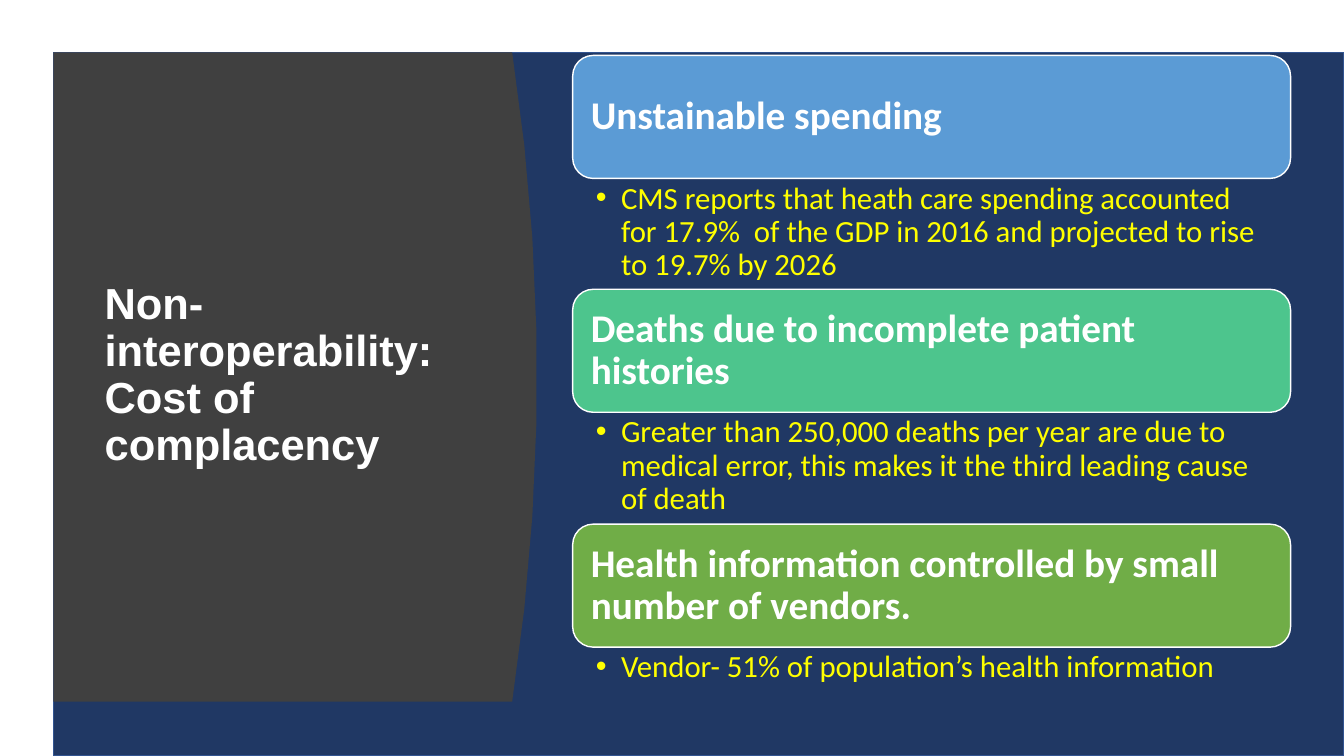
from dataclasses import dataclass

from lxml import etree
from pptx import Presentation
from pptx.dml.color import RGBColor
from pptx.enum.shapes import MSO_SHAPE
from pptx.enum.text import MSO_ANCHOR, PP_ALIGN
from pptx.oxml.ns import qn
from pptx.util import Emu, Pt

RECT = MSO_SHAPE.RECTANGLE
ROUND_RECT = MSO_SHAPE.ROUNDED_RECTANGLE
TOP, MIDDLE = MSO_ANCHOR.TOP, MSO_ANCHOR.MIDDLE
LEFT = PP_ALIGN.LEFT
SCALE = 9144


@dataclass(frozen=True)
class Theme:
    navy: str = "203864"
    navy_line: str = "325491"
    charcoal: str = "404040"
    white: str = "FFFFFF"
    yellow: str = "FFFF00"
    blue: str = "5B9BD5"
    teal: str = "4DC58D"
    green: str = "70AD47"
    title_font: str = "Arial"
    body_font: str = "Calibri"
    title_size: int = 31
    heading_size: int = 28
    body_size: int = 22


def px(n):
    return Emu(n * SCALE)


def write_text(tf, text, font, size, color, bold=False, anchor=TOP,
               insets=(10, 5, 10, 5), bullet=False):
    tf.word_wrap = True
    tf.vertical_anchor = anchor
    tf.margin_left, tf.margin_top, tf.margin_right, tf.margin_bottom = map(px, insets)
    p = tf.paragraphs[0]
    p.alignment = LEFT
    p.line_spacing = 0.9
    if bullet:
        pPr = p._p.get_or_add_pPr()
        pPr.set("marL", str(px(25)))
        pPr.set("indent", str(-px(25)))
        etree.SubElement(pPr, qn("a:buFont")).set("typeface", "Arial")
        etree.SubElement(pPr, qn("a:buChar")).set("char", "•")
    r = p.add_run()
    r.text = text
    r.font.name = font
    r.font.size = Pt(size)
    r.font.bold = bold
    r.font.color.rgb = RGBColor.from_string(color)


class Deck:
    def __init__(self, theme, width, height):
        self.theme = theme
        self.prs = Presentation()
        self.prs.slide_width, self.prs.slide_height = px(width), px(height)
        self.s = self.prs.slides.add_slide(self.prs.slide_layouts[6])

    def paint(self, sp, fill, line=None):
        sp.shadow.inherit = False
        sp.fill.solid()
        sp.fill.fore_color.rgb = RGBColor.from_string(fill)
        if line:
            sp.line.color.rgb = RGBColor.from_string(line)
            sp.line.width = Pt(1)
        else:
            sp.line.fill.background()
        return sp

    def shape(self, kind, box, fill, line):
        sp = self.s.shapes.add_shape(kind, *map(px, box))
        return self.paint(sp, fill, line)

    def outline(self, points, fill):
        builder = self.s.shapes.build_freeform(*points[0], scale=SCALE)
        builder.add_line_segments(points[1:], close=True)
        return self.paint(builder.convert_to_shape(), fill)

    def text(self, box, text, **style):
        sp = self.s.shapes.add_textbox(*map(px, box))
        write_text(sp.text_frame, text, **style)

    def card(self, box, text, fill):
        t = self.theme
        sp = self.shape(ROUND_RECT, box, fill, t.white)
        write_text(sp.text_frame, text, font=t.body_font, size=t.heading_size,
                   color=t.white, bold=True, anchor=MIDDLE, insets=(12, 12, 12, 12))


def main():
    t = Theme()
    deck = Deck(t, 1333, 750)
    deck.shape(RECT, (53, 52, 1280, 698), t.navy, t.navy_line)

    top, bottom, bulge = 52, 696, 24
    half = (bottom - top) // 2
    curve = [(round(532 - bulge * ((y - top - half) / half) ** 2, 2), y)
             for y in range(top, bottom + 1, 23)]
    deck.outline([(53, top), *curve, (53, bottom)], t.charcoal)
    deck.text((94, 111, 374, 524), "Non-interoperability: Cost of complacency",
              font=t.title_font, size=t.title_size, color=t.white, bold=True,
              anchor=MIDDLE)

    costs = [
        ("Unstainable spending", t.blue, 111,
         "CMS reports that heath care spending accounted for 17.9%  of the GDP "
         "in 2016 and projected to rise to 19.7% by 2026"),
        ("Deaths due to incomplete patient histories", t.teal, 111,
         "Greater than 250,000 deaths per year are due to medical error, "
         "this makes it the third leading cause of death"),
        ("Health information controlled by small number of vendors.", t.green, 51,
         "Vendor- 51% of population’s health information"),
    ]
    left, width, card_height, pitch = 568, 712, 122, 465 / 2
    for i, (heading, fill, body_height, body) in enumerate(costs):
        y = 55 + int(i * pitch)
        deck.card((left, y, width, card_height), heading, fill)
        deck.text((left, y + card_height, width, body_height), body,
                  font=t.body_font, size=t.body_size, color=t.yellow,
                  insets=(23, 4, 22, 4), bullet=True)

    deck.prs.save("out.pptx")


if __name__ == "__main__":
    main()
